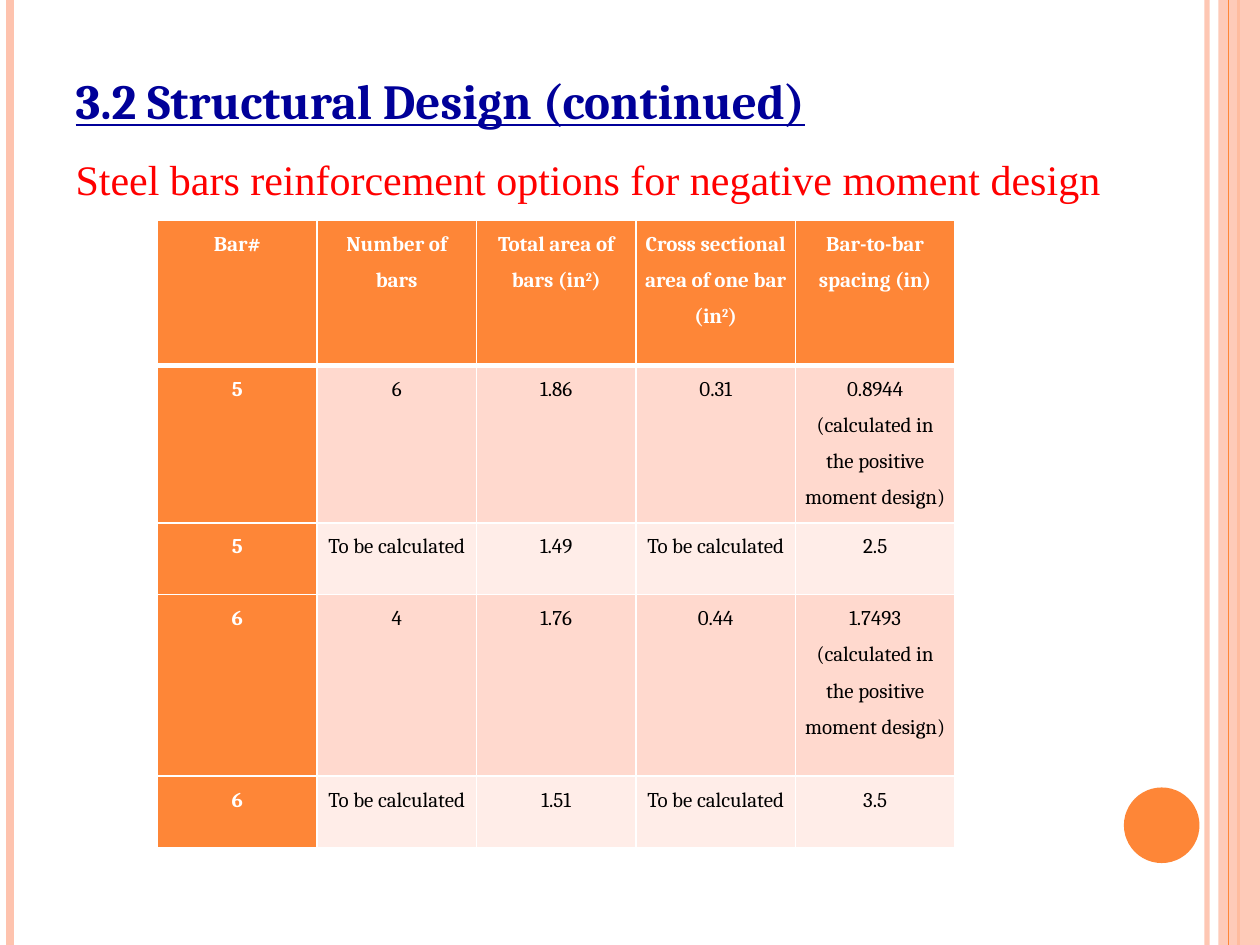
"""Build the slide on steel bar options for negative moment design."""
from dataclasses import dataclass

from lxml.etree import SubElement as Sub
from pptx import Presentation
from pptx.dml.color import RGBColor
from pptx.enum.shapes import MSO_CONNECTOR as Link, MSO_SHAPE as Shape
from pptx.enum.text import MSO_ANCHOR as Anchor, MSO_AUTO_SIZE as Fit, PP_ALIGN as Align
from pptx.oxml.ns import qn
from pptx.util import Inches, Pt

WHITE = RGBColor(0xFF, 0xFF, 0xFF)
BLACK = RGBColor(0, 0, 0)
NAVY = RGBColor(0, 0, 0x99)
RED = RGBColor(0xFF, 0, 0)
ORANGE = RGBColor(0xFE, 0x86, 0x37)
PEACH = RGBColor(0xFE, 0xC3, 0xAE)
ROSE = RGBColor(0xFF, 0xD9, 0xCE)
BLUSH = RGBColor(0xFF, 0xED, 0xE8)


@dataclass
class Rule:
    x: float
    color: RGBColor
    width: float
    alpha: int = 100


@dataclass
class Block:
    left: float
    top: float
    width: float
    height: float
    color: RGBColor
    kind: Shape
    alpha: int = 100


DECOR = [
    Rule(9.58, PEACH, 3, 93),
    Rule(0.08, PEACH, 4.5),
    Rule(9.83, ORANGE, 1.5),
    Block(9.67, 0, 0.33, 7.5, PEACH, Shape.RECTANGLE, 87),
    Rule(9.75, ORANGE, 0.75),
    Block(8.92, 6.25, 0.6, 0.6, ORANGE, Shape.OVAL),
]
NOTE = "(calculated in the positive moment design)"
WAIT = "To be calculated"
ROWS = [
    ["Bar#", "Number of bars", "Total area of bars (in|2|)",
     "Cross sectional area of one bar (in|2|)", "Bar-to-bar spacing (in)"],
    ["5", "6", "1.86", "0.31", f"0.8944 {NOTE}"],
    ["5", WAIT, "1.49", WAIT, "2.5"],
    ["6", "4", "1.76", "0.44", f"1.7493 {NOTE}"],
    ["6", WAIT, "1.51", WAIT, "3.5"],
]
HEIGHTS = [1.15, 1.25, 0.57, 1.44, 0.57]
WIDTH = 6.33


def fade(props, alpha: int) -> None:
    """Set the opacity of the solid colour in the properties."""
    if alpha < 100:
        tint = next(props.iter(qn("a:srgbClr")))
        Sub(tint, qn("a:alpha"), val=str(alpha * 1000))


def draw_rule(slide, rule: Rule) -> None:
    """Draw a vertical line down the whole slide."""
    x = Inches(rule.x)
    line = slide.shapes.add_connector(Link.STRAIGHT, x, 0, x, Inches(7.5))
    line.line.color.rgb = rule.color
    line.line.width = Pt(rule.width)
    props = line._element.spPr
    fade(props, rule.alpha)
    Sub(props, qn("a:effectLst"))


def draw_block(slide, block: Block) -> None:
    """Draw a filled shape with no outline."""
    spot = map(Inches, (block.left, block.top, block.width, block.height))
    shape = slide.shapes.add_shape(block.kind, *spot)
    shape.shadow.inherit = False
    shape.fill.solid()
    shape.fill.fore_color.rgb = block.color
    shape.line.fill.background()
    fade(shape._element.spPr, block.alpha)


def add_run(para, text: str, font: str, size: float, color: RGBColor, bold: bool = False):
    """Add a styled run to a paragraph."""
    run = para.add_run()
    run.text = text
    run.font.name = font
    run.font.size = Pt(size)
    run.font.color.rgb = color
    run.font.bold = bold
    return run


def place(holder, left: float, top: float, width: float, height: float, anchor: Anchor):
    """Move a placeholder and return its first paragraph."""
    holder.left, holder.top = Inches(left), Inches(top)
    holder.width, holder.height = Inches(width), Inches(height)
    frame = holder.text_frame
    frame.word_wrap = True
    frame.auto_size = Fit.NONE
    frame.vertical_anchor = anchor
    para = frame.paragraphs[0]
    para.alignment = Align.LEFT
    para.space_before = Pt(0)
    return para


def edge(cell, side: str, width: float) -> None:
    """Give one side of a cell a white border."""
    line = Sub(cell._tc.get_or_add_tcPr(), qn(f"a:{side}"), w=str(Pt(width)))
    Sub(Sub(line, qn("a:solidFill")), qn("a:srgbClr"), val=str(WHITE))


def fill_cell(cell, text: str, row: int, col: int) -> None:
    """Write and style one cell, raising the text between bars."""
    head = row == 0 or col == 0
    for side in ("lnL", "lnR", "lnT", "lnB"):
        thick = (row, side) in ((0, "lnB"), (1, "lnT"))
        edge(cell, side, 3 if thick else 1)
    cell.fill.solid()
    cell.fill.fore_color.rgb = ORANGE if head else ROSE if row % 2 else BLUSH
    cell.margin_left = cell.margin_right = Inches(0.07)
    cell.margin_top = cell.margin_bottom = 0
    para = cell.text_frame.paragraphs[0]
    para.alignment = Align.CENTER
    para.line_spacing = 1.5
    for index, part in enumerate(text.split("|")):
        run = add_run(para, part, "Cambria", 12, WHITE if head else BLACK, head)
        if index % 2:
            run._r.get_or_add_rPr().set("baseline", "30000")


def draw_table(slide) -> None:
    """Draw the table of bar options."""
    count = len(ROWS[0])
    spot = map(Inches, (1.25, 1.75, WIDTH, sum(HEIGHTS)))
    table = slide.shapes.add_table(len(ROWS), count, *spot).table
    for col in table.columns:
        col.width = Inches(WIDTH / count)
    for row, (texts, height) in enumerate(zip(ROWS, HEIGHTS)):
        table.rows[row].height = Inches(height)
        for col, text in enumerate(texts):
            fill_cell(table.cell(row, col), text, row, col)


def main() -> None:
    """Build and save the slide."""
    deck = Presentation()
    deck.slide_width, deck.slide_height = Inches(10), Inches(7.5)
    slide = deck.slides.add_slide(deck.slide_layouts[1])
    title, body = slide.placeholders
    para = place(title, 0.5, 0.3, 8.17, 1.25, Anchor.BOTTOM)
    title.text_frame.margin_bottom = Inches(0.52)
    run = add_run(para, "3.2 Structural Design (continued)", "Cambria", 28, NAVY, True)
    run.font.underline = True
    para = place(body, 0.5, 1.17, 8.83, 5.91, Anchor.TOP)
    props = para._p.get_or_add_pPr()
    props.set("marL", "0")
    props.set("indent", "0")
    Sub(props, qn("a:buNone"))
    add_run(para, "Steel bars reinforcement options for negative moment design",
            "Times New Roman", 24, RED)
    for item in DECOR:
        if isinstance(item, Rule):
            draw_rule(slide, item)
        else:
            draw_block(slide, item)
    draw_table(slide)
    deck.save("out.pptx")


if __name__ == "__main__":
    main()
